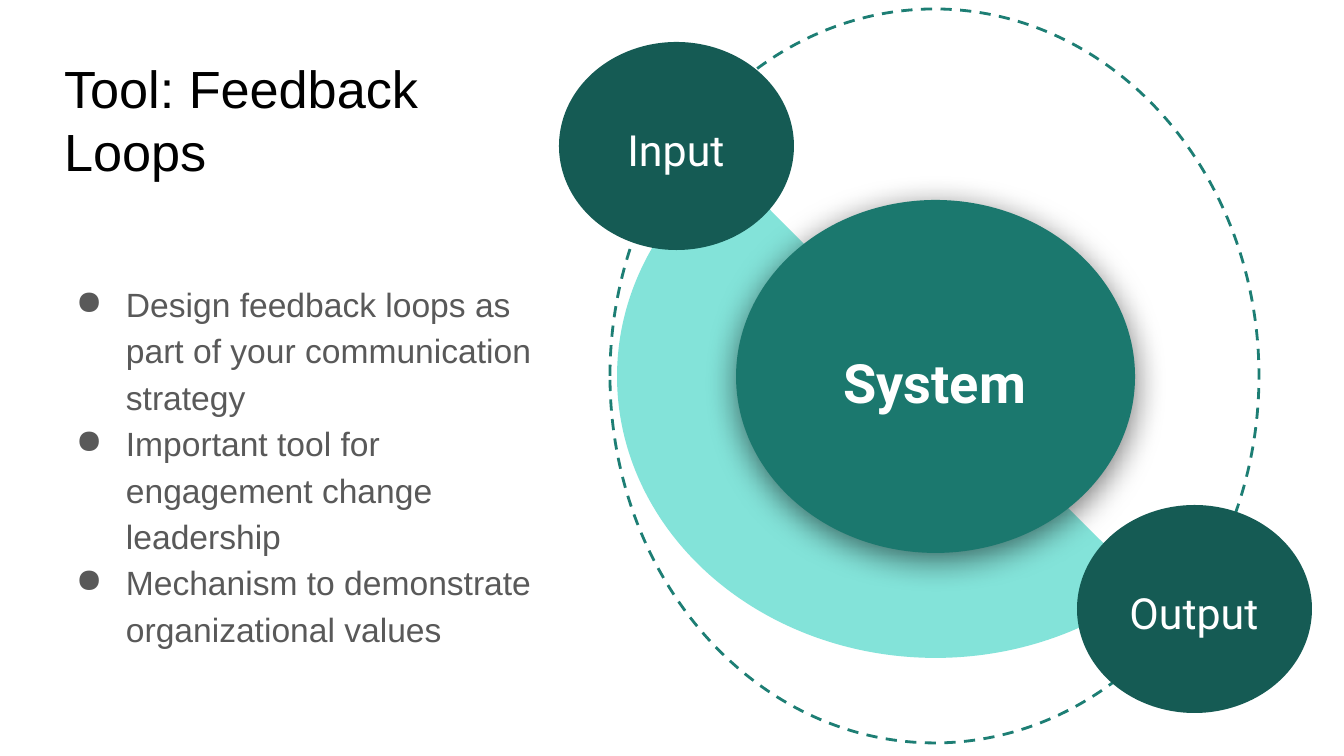
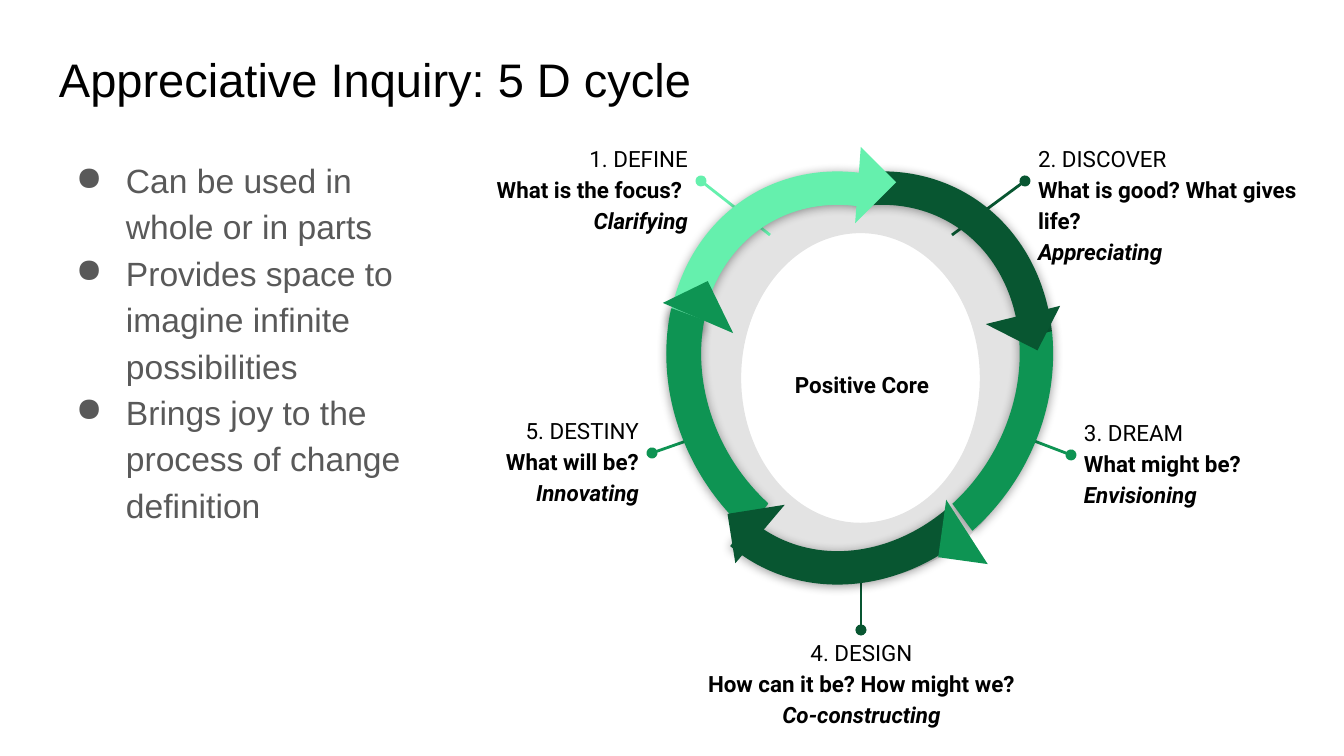
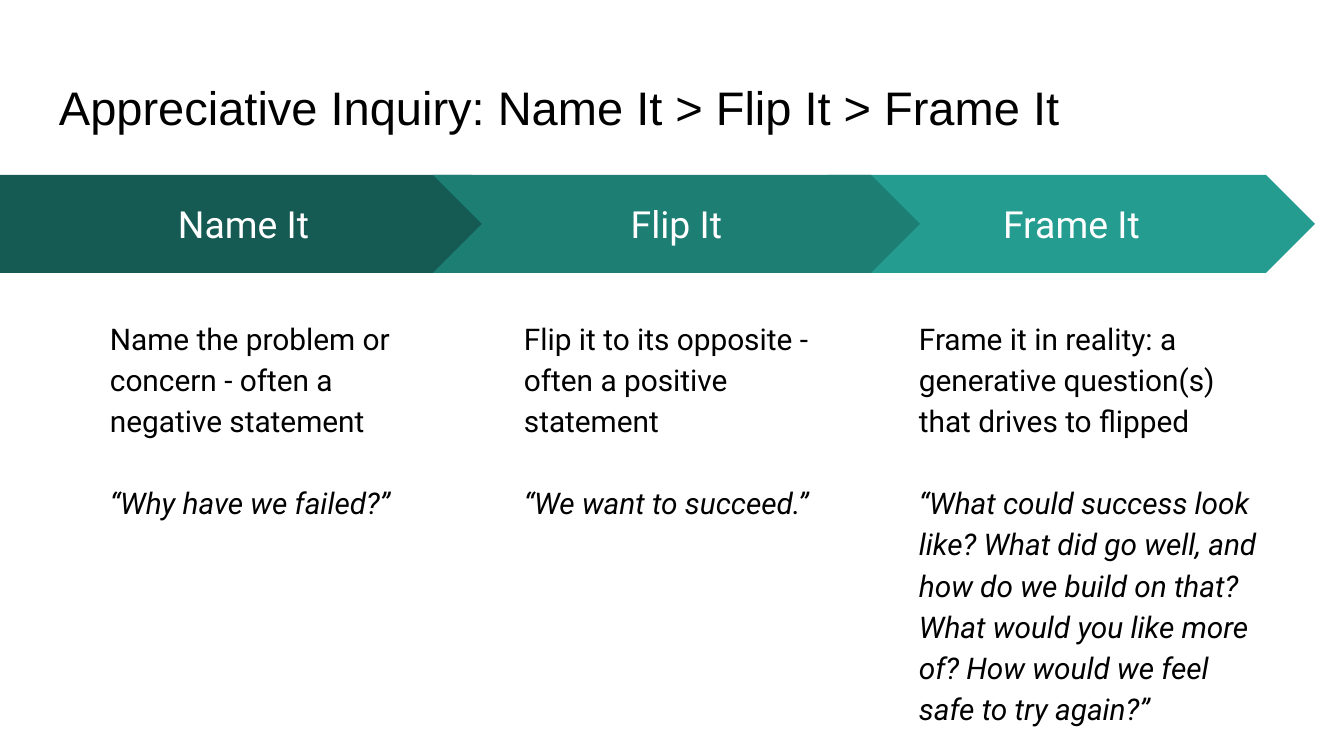
from dataclasses import dataclass
from typing import NamedTuple

from lxml import etree
from pptx import Presentation
from pptx.dml.color import RGBColor
from pptx.enum.dml import MSO_LINE
from pptx.enum.shapes import MSO_CONNECTOR, MSO_SHAPE
from pptx.enum.text import MSO_ANCHOR, PP_ALIGN
from pptx.oxml.ns import qn
from pptx.util import Emu, Pt

EMU_PER_PX = 914400 / 134.4
ADJUSTMENT_PER_DEGREE = 0.6
LEFT, CENTER, RIGHT = PP_ALIGN.LEFT, PP_ALIGN.CENTER, PP_ALIGN.RIGHT
TOP, MIDDLE = MSO_ANCHOR.TOP, MSO_ANCHOR.MIDDLE
OVAL, PIE, DONUT = MSO_SHAPE.OVAL, MSO_SHAPE.PIE, MSO_SHAPE.DONUT
BLOCK_ARC, RIGHT_TRIANGLE = MSO_SHAPE.BLOCK_ARC, MSO_SHAPE.RIGHT_TRIANGLE
CHEVRON, PENTAGON = MSO_SHAPE.CHEVRON, MSO_SHAPE.PENTAGON
STRAIGHT, DASH = MSO_CONNECTOR.STRAIGHT, MSO_LINE.DASH
LEFT_SITE, RIGHT_SITE = 1, 3


@dataclass(frozen=True)
class Theme:
    heading_font: str = "Arial"
    diagram_font: str = "Roboto"
    black: str = "000000"
    core_text: str = "020202"
    white: str = "FFFFFF"
    gray: str = "595959"
    teal_dark: str = "155B54"
    teal_system: str = "1B786E"
    teal: str = "1D7E74"
    teal_bright: str = "249C90"
    teal_pale: str = "83E3D9"
    green_dark: str = "085631"
    green: str = "0E9453"
    green_light: str = "65F0AD"
    title_large: float = 28
    title: float = 25.2
    bullet: float = 18
    system: float = 29
    disc: float = 23
    band: float = 20
    step: float = 16
    cycle: float = 12
    line_spacing: float = 1.15


THEME = Theme()


class Frame(NamedTuple):
    left: int
    top: int
    width: int
    height: int

    def centered(self, width: int, height: int) -> "Frame":
        """Frame of the given size around the same centre."""
        return Frame(self.left + (self.width - width) // 2,
                     self.top + (self.height - height) // 2, width, height)


class Style(NamedTuple):
    size: float
    color: str = THEME.black
    font: str = THEME.diagram_font
    align: PP_ALIGN = LEFT
    anchor: MSO_ANCHOR = TOP
    spacing: float | None = THEME.line_spacing


class Line(NamedTuple):
    text: str
    bold: bool = False
    italic: bool = False
    space_before: float = 0


class Shadow(NamedTuple):
    alpha: int
    blur: float
    distance: float


class Disc(NamedTuple):
    label: str
    frame: Frame
    label_size: tuple[int, int]
    color: str
    text_size: float
    bold: bool = False
    shadow: Shadow | None = None


class Phase(NamedTuple):
    name: str
    question: str
    action: str
    frame: Frame
    align: PP_ALIGN
    pointer_end: tuple[int, int]
    color: str
    site: int | None = None


class Arc(NamedTuple):
    rotation: int
    flipped: bool
    start: float
    end: float
    thickness: float
    color: str
    outlined: bool = False


class Arrowhead(NamedTuple):
    center_x: int
    center_y: int
    rotation: float
    color: str


class Step(NamedTuple):
    label: str
    left: int
    width: int
    kind: MSO_SHAPE
    color: str
    text_left: int
    text_width: int
    meaning: str
    quote: str


def px(value: float) -> Emu:
    return Emu(round(value * EMU_PER_PX))


def rgb(color: str) -> RGBColor:
    return RGBColor.from_string(color)


def write(shape, lines: list[Line], style: Style) -> None:
    frame = shape.text_frame
    frame.word_wrap = True
    frame.vertical_anchor = style.anchor
    frame.margin_left = frame.margin_right = px(13)
    frame.margin_top = frame.margin_bottom = px(13)
    frame.text = "\n".join(line.text for line in lines)
    for paragraph, line in zip(frame.paragraphs, lines):
        paragraph.alignment = style.align
        if style.spacing:
            paragraph.line_spacing = style.spacing
        paragraph.space_before = Pt(line.space_before)
        for run in paragraph.runs:
            run.font.name = style.font
            run.font.size = Pt(style.size)
            run.font.color.rgb = rgb(style.color)
            run.font.bold = line.bold
            run.font.italic = line.italic


def add_text(slide, frame: Frame, lines: list[Line], style: Style):
    box = slide.shapes.add_textbox(*map(px, frame))
    write(box, lines, style)
    return box


def add_title(slide, text: str, frame: Frame, size: float = THEME.title) -> None:
    add_text(slide, frame, [Line(text)],
             Style(size, font=THEME.heading_font, spacing=None))


def add_bullets(slide, frame: Frame, items: list[str]) -> None:
    box = add_text(slide, frame, [Line(item) for item in items],
                   Style(THEME.bullet, THEME.gray, THEME.heading_font))
    for paragraph in box.text_frame.paragraphs:
        properties = paragraph._p.get_or_add_pPr()
        properties.set("marL", str(px(67)))
        properties.set("indent", str(px(-50)))
        color = etree.SubElement(properties, qn("a:buClr"))
        etree.SubElement(color, qn("a:srgbClr"), val=THEME.gray)
        etree.SubElement(properties, qn("a:buChar"), char="●")


def set_alpha(color_element, percent: int) -> None:
    etree.SubElement(color_element, qn("a:alpha"), val=str(percent * 1000))


def add_filled(slide, kind: MSO_SHAPE, frame: Frame, color: str | None,
               adjustments: tuple[float, ...] = (), rotation: float = 0,
               shadow: Shadow | None = None):
    """Add a preset shape without outline; no colour means no fill."""
    shape = slide.shapes.add_shape(kind, *map(px, frame))
    shape.shadow.inherit = False
    shape.rotation = rotation
    shape.line.fill.background()
    if color:
        shape.fill.solid()
        shape.fill.fore_color.rgb = rgb(color)
    else:
        shape.fill.background()
    for index, value in enumerate(adjustments):
        shape.adjustments[index] = value
    if shadow:
        effects = shape._element.spPr.find(qn("a:effectLst"))
        outer = etree.SubElement(
            effects, qn("a:outerShdw"), blurRad=str(Pt(shadow.blur)),
            dist=str(Pt(shadow.distance)), dir="5400000", algn="bl", rotWithShape="0")
        set_alpha(etree.SubElement(outer, qn("a:srgbClr"), val=THEME.black), shadow.alpha)
    return shape


def angles(start: float, end: float) -> tuple[float, float]:
    return start * ADJUSTMENT_PER_DEGREE, end * ADJUSTMENT_PER_DEGREE


def add_disc(slide, disc: Disc) -> None:
    add_filled(slide, OVAL, disc.frame, disc.color, shadow=disc.shadow)
    add_text(slide, disc.frame.centered(*disc.label_size), [Line(disc.label, disc.bold)],
             Style(disc.text_size, THEME.white, align=CENTER, anchor=MIDDLE))


def add_phase(slide, phase: Phase) -> None:
    """Add a phase caption and its dotted pointer into the ring."""
    caption = add_text(
        slide, phase.frame,
        [Line(phase.name), Line(phase.question, bold=True),
         Line(phase.action, bold=True, italic=True)],
        Style(THEME.cycle, align=phase.align))
    start = phase.frame.left + phase.frame.width // 2, phase.frame.top + 8
    pointer = slide.shapes.add_connector(STRAIGHT, *map(px, start + phase.pointer_end))
    if phase.site is not None:
        pointer.begin_connect(caption, phase.site)
    pointer.line.color.rgb = rgb(phase.color)
    pointer.line.width = Pt(1.5)
    etree.SubElement(pointer.line._get_or_add_ln(), qn("a:headEnd"), type="oval")
    etree.SubElement(pointer._element.spPr, qn("a:effectLst"))


def add_arc(slide, arc: Arc) -> None:
    shape = add_filled(slide, BLOCK_ARC, Frame(674, 165, 372, 426), arc.color,
                       (*angles(arc.start, arc.end), arc.thickness), arc.rotation,
                       Shadow(40, 5.6, 0.8))
    if arc.flipped:
        shape._element.spPr.find(qn("a:xfrm")).set("flipH", "1")
    if arc.outlined:
        shape.line.color.rgb = rgb(arc.color)
        shape.line.width = Pt(0.75)


def add_arrowhead(slide, head: Arrowhead) -> None:
    frame = Frame(head.center_x, head.center_y, 0, 0).centered(50, 58)
    add_filled(slide, RIGHT_TRIANGLE, frame, head.color, rotation=head.rotation)


def add_step(slide, step: Step) -> None:
    band = add_filled(slide, step.kind, Frame(step.left, 175, step.width, 98),
                      step.color, (0.5,))
    write(band, [Line(step.label)],
          Style(THEME.band, THEME.white, align=CENTER, anchor=MIDDLE, spacing=None))
    add_text(slide, Frame(step.text_left, 302, step.text_width, 384),
             [Line(step.meaning), Line(step.quote, italic=True, space_before=22)],
             Style(THEME.step))


def build_feedback_loops(slide) -> None:
    add_title(slide, "Tool: Feedback Loops", Frame(51, 43, 426, 208), THEME.title_large)
    orbit = add_filled(slide, OVAL, Frame(610, 9, 649, 734), None)
    orbit.line.color.rgb = rgb(THEME.teal)
    orbit.line.width = Pt(1.5)
    orbit.line.dash_style = DASH
    add_filled(slide, PIE, Frame(617, 95, 637, 563), THEME.teal_pale, angles(44.8, 225.2))
    for disc in (
        Disc("System", Frame(736, 200, 399, 353), (296, 161), THEME.teal_system,
             THEME.system, True, Shadow(55, 18, 4)),
        Disc("Input", Frame(559, 42, 235, 208), (168, 142), THEME.teal_dark, THEME.disc),
        Disc("Output", Frame(1077, 505, 235, 208), (168, 142), THEME.teal_dark, THEME.disc),
    ):
        add_disc(slide, disc)
    add_bullets(slide, Frame(46, 265, 523, 406), [
        "Design feedback loops as part of your communication strategy",
        "Important tool for engagement change leadership",
        "Mechanism to demonstrate organizational values",
    ])


def build_five_d_cycle(slide) -> None:
    add_title(slide, "Appreciative Inquiry: 5 D cycle", Frame(46, 38, 1253, 85))
    add_bullets(slide, Frame(46, 141, 383, 552), [
        "Can be used in whole or in parts",
        "Provides space to imagine infinite possibilities",
        "Brings joy to the process of change definition",
    ])
    ring = add_filled(slide, DONUT, Frame(685, 177, 351, 402), THEME.black, (0.16,))
    set_alpha(ring._element.spPr.find(qn("a:solidFill"))[0], 11)
    for phase in (
        Phase("2. DISCOVER", "What is good? What gives life?", "Appreciating",
              Frame(1025, 128, 319, 106), LEFT, (952, 235), THEME.green_dark, LEFT_SITE),
        Phase("1. DEFINE", "What is the focus? ", "Clarifying",
              Frame(477, 128, 224, 106), RIGHT, (770, 235), THEME.green_light, RIGHT_SITE),
        Phase("3. DREAM", "What might be?", "Envisioning",
              Frame(1071, 402, 207, 106), LEFT, (1008, 431), THEME.green, LEFT_SITE),
        Phase("5. DESTINY", "What will be?", "Innovating",
              Frame(445, 400, 207, 106), RIGHT, (715, 431), THEME.green, RIGHT_SITE),
        Phase("4. DESIGN", "How can it be? How might we?", "Co-constructing",
              Frame(686, 622, 351, 106), CENTER, (861, 554), THEME.green_dark),
    ):
        add_phase(slide, phase)
    add_text(slide, Frame(762, 319, 200, 128), [Line("Positive Core", bold=True)],
             Style(THEME.cycle, THEME.core_text, align=CENTER, anchor=MIDDLE))
    for arc in (
        Arc(30, False, 240.2, 316.6, 0.09, THEME.green_dark),
        Arc(210, True, 336.3, 43.7, 0.09, THEME.green),
        Arc(330, True, 238.9, 314.2, 0.09, THEME.green_light),
        Arc(150, False, 336.4, 50.1, 0.09, THEME.green, outlined=True),
        Arc(210, True, 262.3, 333.5, 0.09, THEME.green_dark),
    ):
        add_arc(slide, arc)
    for head in (
        Arrowhead(1023, 315, 297, THEME.green_dark),
        Arrowhead(698, 318, 154, THEME.green),
        Arrowhead(967, 532, 7.9, THEME.green),
        Arrowhead(760, 534, 81, THEME.green_dark),
        Arrowhead(858, 185, 225, THEME.green_light),
    ):
        add_arrowhead(slide, head)


def build_name_flip_frame(slide) -> None:
    add_title(slide, "Appreciative Inquiry: Name It > Flip It > Frame It",
              Frame(46, 66, 1253, 85))
    for step in (
        Step("Frame It", 828, 487, CHEVRON, THEME.teal_bright, 906, 372,
             "Frame it in reality: a generative question(s) that drives to flipped",
             "“What could success look like? What did go well, and how do we build on that? "
             "What would you like more of? How would we feel safe to try again?”"),
        Step("Name It ", 0, 521, PENTAGON, THEME.teal_dark, 97, 329,
             "Name the problem or concern - often a negative statement",
             "“Why have we failed?”"),
        Step("Flip It", 433, 487, CHEVRON, THEME.teal, 511, 329,
             "Flip it to its opposite - often a positive statement",
             "“We want to succeed.”"),
    ):
        add_step(slide, step)


def main() -> None:
    deck = Presentation()
    deck.slide_width, deck.slide_height = px(1344), px(756)
    blank = deck.slide_layouts[6]
    for build in (build_feedback_loops, build_five_d_cycle, build_name_flip_frame):
        build(deck.slides.add_slide(blank))
    deck.save("out.pptx")


if __name__ == "__main__":
    main()
